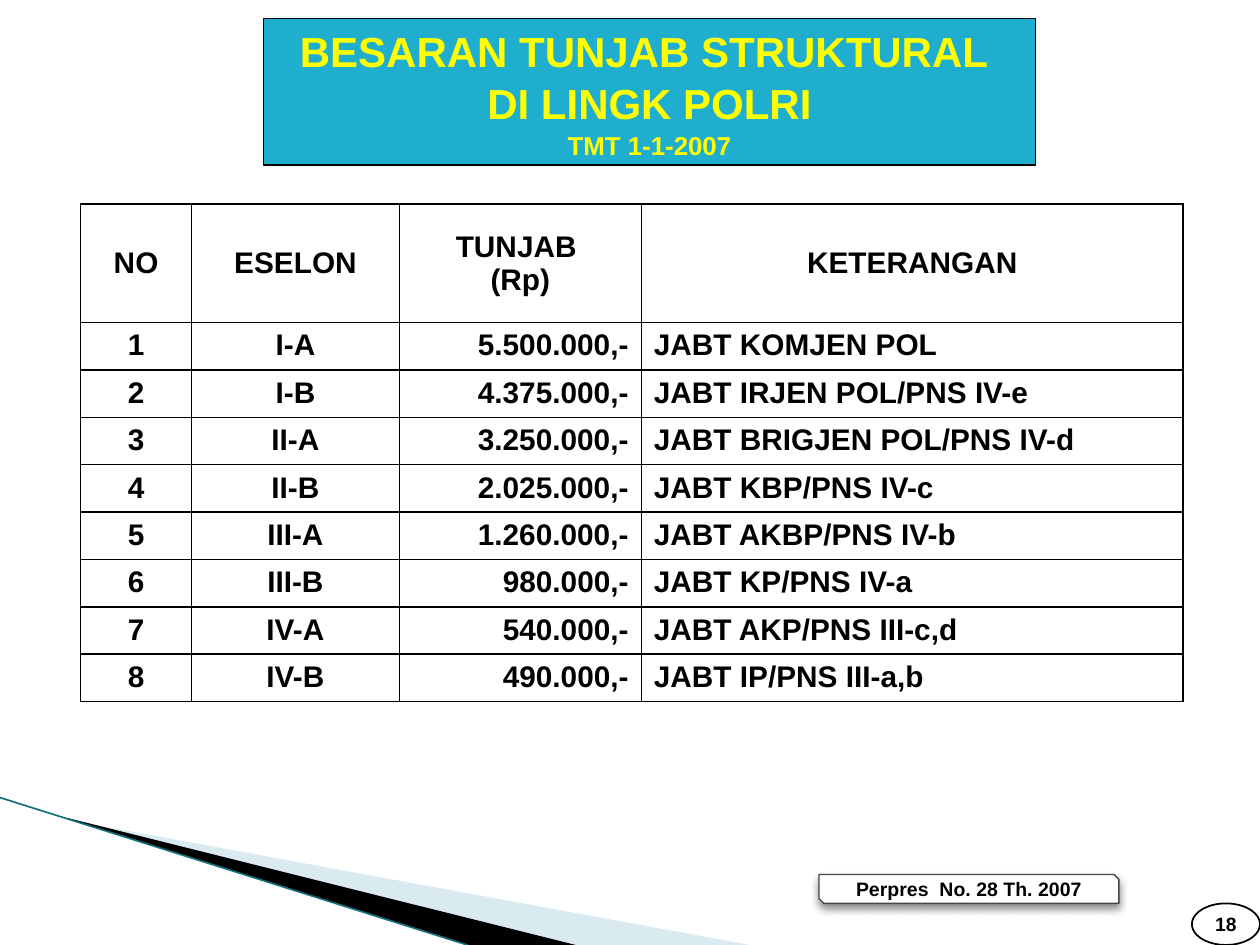
"""Build the slide on structural position allowances, laid out on a grid of 100 columns by 75 rows."""
import pptx
import pptx.chart.data
import pptx.dml.color
import pptx.enum.shapes
import pptx.enum.text
import pptx.oxml
import pptx.oxml.ns
import pptx.util

THEME = {
    "font": "Arial",
    "black": "000000", "white": "FFFFFF", "banner": "1FAECD", "yellow": "FFFF00",
    "wedge": "A0CBDC", "edge": "14707F", "frame": "464646",
    "title": 24, "subtitle": 14.8, "table": 17, "source": 11.1, "number": 11,
}
RGB = pptx.dml.color.RGBColor.from_string
ALIGN = pptx.enum.text.PP_ALIGN
ANCHOR = pptx.enum.text.MSO_ANCHOR
SHAPE = pptx.enum.shapes.MSO_SHAPE
NS = pptx.oxml.ns.nsdecls("a")
UNIT = pptx.util.Inches(0.1)


def grid(*cells):
    return [round(cell * UNIT) for cell in cells]


def write(frame, lines, color, align=ALIGN.CENTER, spacing=None):
    for index, (text, size) in enumerate(lines):
        paragraph = frame.paragraphs[0] if index == 0 else frame.add_paragraph()
        paragraph.alignment = align
        paragraph.line_spacing = spacing
        run = paragraph.add_run()
        run.text = text
        run.font.color.rgb = RGB(THEME[color])
        styling = {"name": THEME["font"], "size": pptx.util.Pt(THEME[size]), "bold": True}
        for attribute, value in styling.items():
            setattr(run.font, attribute, value)


deck = pptx.Presentation()
deck.slide_width, deck.slide_height = grid(100, 75)
slide = deck.slides.add_slide(deck.slide_layouts[6])

wedges = [
    ("wedge", 40, [(5.5, 65.1), (59.5, 75), (45.6, 75), (5.5, 65)]),
    ("black", 100, [(5.3, 64.9), (45.7, 75), (37.2, 75), (5.4, 65)]),
]
for color, opacity, corners in wedges:
    outline = slide.shapes.build_freeform(*grid(*corners[0]))
    outline.add_line_segments([grid(*corner) for corner in corners[1:]], close=True)
    wedge = outline.convert_to_shape()
    wedge.shadow.inherit = False
    wedge.line.fill.background()
    wedge.fill.solid()
    wedge.fill.fore_color.rgb = RGB(THEME[color])
    tint = wedge.fill._xPr.find(".//" + pptx.oxml.ns.qn("a:srgbClr"))
    tint.append(pptx.oxml.parse_xml(f'<a:alpha {NS} val="{opacity * 1000}"/>'))

edge = slide.shapes.add_connector(
    pptx.enum.shapes.MSO_CONNECTOR.STRAIGHT, *grid(0, 63.3, 37.1, 75))
edge.line.color.rgb = RGB(THEME["edge"])
edge.line.width = pptx.util.Pt(0.95)
edge._element.spPr.append(pptx.oxml.parse_xml(f"<a:effectLst {NS}/>"))

headings = [["NO"], ["ESELON"], ["TUNJAB ", "(Rp)"], ["KETERANGAN"]]
allowances = [
    ("I-A", "5.500.000,-", "JABT KOMJEN POL"),
    ("I-B", "4.375.000,-", "JABT IRJEN POL/PNS IV-e"),
    ("II-A", "3.250.000,-", "JABT BRIGJEN POL/PNS IV-d"),
    ("II-B", "2.025.000,-", "JABT KBP/PNS IV-c"),
    ("III-A", "1.260.000,-", "JABT AKBP/PNS IV-b"),
    ("III-B", "980.000,-", "JABT KP/PNS IV-a"),
    ("IV-A", "540.000,-", "JABT AKP/PNS III-c,d"),
    ("IV-B", "490.000,-", "JABT IP/PNS III-a,b"),
]
records = [headings] + [
    [[str(number)]] + [[value] for value in allowance]
    for number, allowance in enumerate(allowances, 1)
]
aligns = [ALIGN.CENTER, ALIGN.CENTER, ALIGN.RIGHT, ALIGN.JUSTIFY]
table = slide.shapes.add_table(
    len(records), len(headings), *grid(6.4, 16.2, 87.5, 39.5)).table
for column, width in zip(table.columns, grid(8.8, 16.5, 19.2, 43)):
    column.width = width
for row, height in zip(table.rows, grid(9.4, *[30.1 / len(allowances)] * len(allowances))):
    row.height = height
for row, record in enumerate(records):
    for column, lines in enumerate(record):
        cell = table.cell(row, column)
        cell.vertical_anchor = ANCHOR.MIDDLE if row == 0 else ANCHOR.TOP
        write(cell.text_frame, [(line, "table") for line in lines], "black",
              ALIGN.CENTER if row == 0 else aligns[column])
        borders = cell._tc.get_or_add_tcPr()
        for side in ("lnL", "lnR", "lnT", "lnB"):
            borders.append(pptx.oxml.parse_xml(
                f'<a:{side} {NS} w="12700"><a:solidFill><a:srgbClr val="{THEME["black"]}"/>'
                f"</a:solidFill></a:{side}>"))
        cell.fill.solid()
        cell.fill.fore_color.rgb = RGB(THEME["white"])

panels = [
    (SHAPE.SNIP_2_DIAG_RECTANGLE, (65, 69.4, 23.8, 2.3), "white", "frame", 0.75, "black",
     [("Perpres  No. 28 Th. 2007", "source")], None),
    (SHAPE.RECTANGLE, (20.9, 1.5, 61.3, 11.6), "banner", "black", 0.75, "yellow",
     [("BESARAN TUNJAB STRUKTURAL ", "title"), ("DI LINGK POLRI", "title"),
      ("TMT 1-1-2007", "subtitle")], 1.04),
    (SHAPE.OVAL, (94.6, 71.7, 5.4, 3.3), "white", "black", 1, "black",
     [("18", "number")], None),
]
boxes = []
for preset, place, fill, line, weight, color, lines, spacing in panels:
    box = slide.shapes.add_shape(preset, *grid(*place))
    box.shadow.inherit = False
    box.fill.solid()
    box.fill.fore_color.rgb = RGB(THEME[fill])
    box.line.color.rgb = RGB(THEME[line])
    box.line.width = pptx.util.Pt(weight)
    layout = {"margin_left": 0, "margin_right": 0, "margin_top": 0, "margin_bottom": 0,
              "word_wrap": True, "vertical_anchor": ANCHOR.MIDDLE}
    for attribute, value in layout.items():
        setattr(box.text_frame, attribute, value)
    write(box.text_frame, lines, color, spacing=spacing)
    boxes.append(box)

source, banner, _ = boxes
shadow = (
    f'<a:outerShdw {NS} blurRad="{{}}" dist="38100" dir="5400000" algn="t" rotWithShape="0">'
    f'<a:srgbClr val="{THEME["black"]}"><a:alpha val="{{}}"/></a:srgbClr></a:outerShdw>')
source._element.spPr.find(pptx.oxml.ns.qn("a:effectLst")).append(
    pptx.oxml.parse_xml(shadow.format(63500, 45000)))
for paragraph in banner.text_frame.paragraphs:
    effects = pptx.oxml.parse_xml(f"<a:effectLst {NS}/>")
    effects.append(pptx.oxml.parse_xml(shadow.format(38100, 80000)))
    paragraph.runs[0].font._element.find(pptx.oxml.ns.qn("a:solidFill")).addnext(effects)

deck.save("out.pptx")
